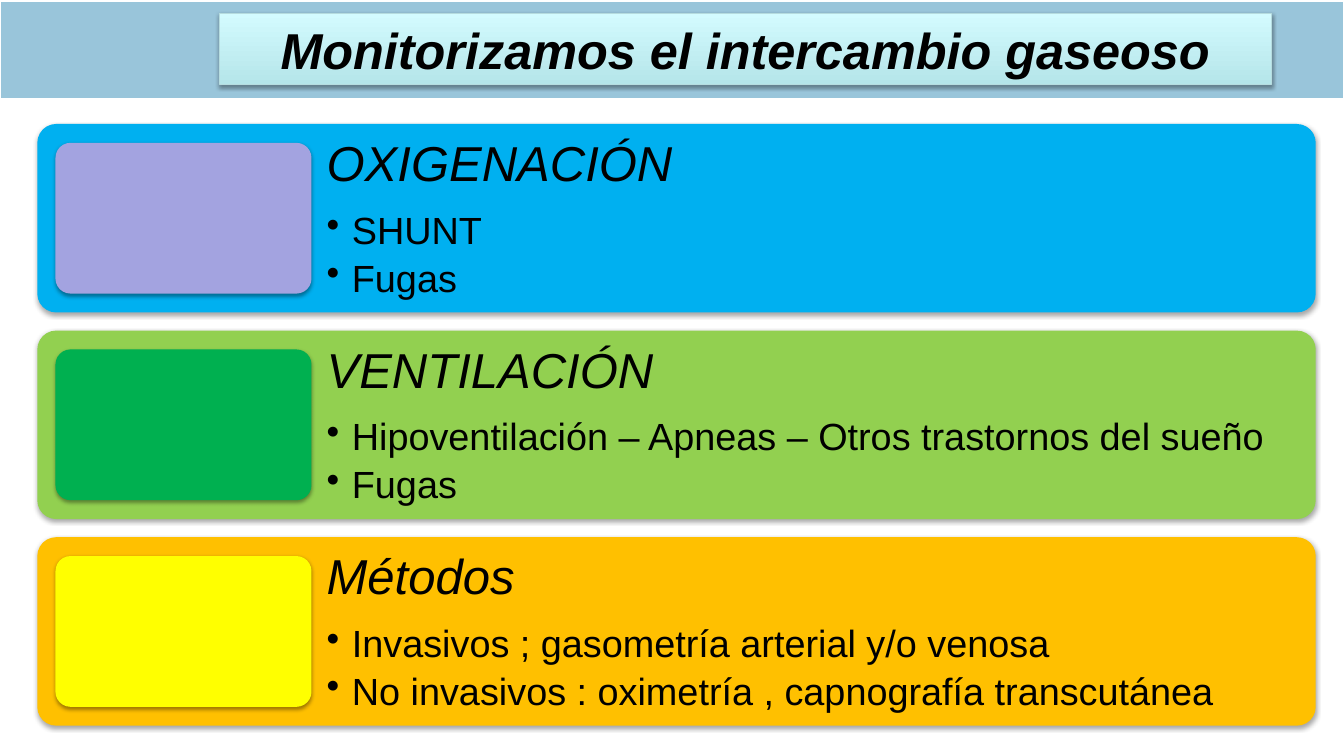
from dataclasses import dataclass

from lxml import etree
from pptx import Presentation
from pptx.dml.color import RGBColor
from pptx.enum.shapes import MSO_SHAPE
from pptx.enum.text import MSO_ANCHOR, MSO_AUTO_SIZE, PP_ALIGN
from pptx.oxml import parse_xml
from pptx.oxml.ns import qn
from pptx.util import Inches, Pt

RECT, ROUND = MSO_SHAPE.RECTANGLE, MSO_SHAPE.ROUNDED_RECTANGLE
LEFT, CENTER = PP_ALIGN.LEFT, PP_ALIGN.CENTER
TOP, MIDDLE = MSO_ANCHOR.TOP, MSO_ANCHOR.MIDDLE
FIXED = MSO_AUTO_SIZE.NONE

WIDE, HIGH = Inches(13.33), Inches(7.5)
FONT = "Arial"
DRAW = "http://schemas.openxmlformats.org/drawingml/2006/main"
HEX = {
    "ink": "000000", "white": "FFFFFF", "band": "99C5DA",
    "pale": "D3FBFF", "aqua": "B5E5E9", "rim": "B6DCDF",
    "blue": "00B0F0", "lilac": "A3A3E0",
    "lime": "92D050", "green": "00B050",
    "amber": "FFC000", "yellow": "FFFF00",
}


@dataclass(frozen=True)
class Box:
    """A frame in percent of the slide's width and height."""
    x: float
    y: float
    w: float
    h: float

    def frame(self) -> tuple[int, int, int, int]:
        return (int(WIDE * self.x / 100), int(HIGH * self.y / 100),
                int(WIDE * self.w / 100), int(HIGH * self.h / 100))


@dataclass(frozen=True)
class Card:
    head: str
    items: tuple[str, ...]
    fill: str
    tile: str


CARDS = (
    Card("OXIGENACIÓN", ("SHUNT", "Fugas"), "blue", "lilac"),
    Card("VENTILACIÓN",
         ("Hipoventilación – Apneas – Otros trastornos del sueño", "Fugas"),
         "lime", "green"),
    Card("Métodos",
         ("Invasivos ; gasometría arterial y/o venosa",
          "No invasivos : oximetría , capnografía transcutánea"),
         "amber", "yellow"),
)
BAND = Box(0, 0.13, 100, 13.07)
TITLE = Box(16.35, 1.73, 78.24, 9.47)
FIRST = Box(2.78, 16.4, 95.12, 24.93)
PITCH = 27.33
TILE_X, TILE_W = 4.13, 19.05


def color(name: str) -> RGBColor:
    return RGBColor.from_string(HEX[name])


def shade(shape, alpha: int, dist: float) -> None:
    """Cast a soft shadow straight down."""
    shape._element.spPr.append(parse_xml(
        f'<a:effectLst xmlns:a="{DRAW}"><a:outerShdw blurRad="{Pt(3.1)}" '
        f'dist="{Pt(dist)}" dir="5400000" rotWithShape="0">'
        f'<a:srgbClr val="{HEX["ink"]}"><a:alpha val="{alpha * 1000}"/>'
        '</a:srgbClr></a:outerShdw></a:effectLst>'))


def panel(slide, box: Box, fill: str, kind=ROUND):
    shape = slide.shapes.add_shape(kind, *box.frame())
    shape.fill.solid()
    shape.fill.fore_color.rgb = color(fill)
    shape.line.fill.background()
    if kind == ROUND:
        shape.adjustments[0] = 0.1
    return shape


def setup(frame, inset: float, anchor=TOP) -> None:
    frame.word_wrap = True
    frame.auto_size = FIXED
    frame.vertical_anchor = anchor
    frame.margin_left = frame.margin_right = Inches(inset)
    frame.margin_top = frame.margin_bottom = Inches(min(inset, 0.15))


def write(para, text: str, *, size: float, bold: bool = False,
          italic: bool = False, align=LEFT, line: float = 1,
          after: float = 0, bullet: bool = False) -> None:
    para.alignment = align
    para.line_spacing = line
    para.space_before, para.space_after = Pt(0), Pt(after)
    if bullet:
        para.level = 1
        props = para._p.get_or_add_pPr()
        props.set("marL", str(Inches(0.25)))
        props.set("indent", str(-Inches(0.25)))
        etree.SubElement(props, qn("a:buChar")).set("char", "•")
    run = para.add_run()
    run.text = text
    font = run.font
    font.name, font.size = FONT, Pt(size)
    font.bold, font.italic = bold, italic
    font.color.rgb = color("ink")


def draw_title(slide) -> None:
    title = slide.shapes.title
    title.left, title.top, title.width, title.height = TITLE.frame()
    props = title._element.spPr
    etree.SubElement(props, qn("a:prstGeom")).set("prst", "roundRect")
    title.fill.gradient()
    title.fill.gradient_angle = 90
    for stop, name in zip(title.fill.gradient_stops, ("aqua", "pale")):
        stop.color.rgb = color(name)
    title.line.color.rgb = color("rim")
    title.line.width = Pt(0.75)
    shade(title, 35, 1.8)
    setup(title.text_frame, 0.1, MIDDLE)
    write(title.text_frame.paragraphs[0],
          "Monitorizamos el intercambio gaseoso",
          size=36, bold=True, italic=True, align=CENTER)
    slide.shapes._spTree.append(title._element)


def draw_card(slide, card: Card, row: int) -> None:
    top, high = FIRST.y + row * PITCH, FIRST.h
    shade(panel(slide, Box(FIRST.x, top, FIRST.w, high), card.fill), 35, 1.8)
    left = TILE_X + TILE_W
    area = Box(left, top, FIRST.x + FIRST.w - left, high)
    frame = slide.shapes.add_textbox(*area.frame()).text_frame
    setup(frame, 0.15)
    write(frame.paragraphs[0], card.head, size=35, italic=True,
          line=0.9, after=14)
    for item in card.items:
        write(frame.add_paragraph(), item, size=27, line=0.9, after=5,
              bullet=True)
    tile = Box(TILE_X, top + 0.1 * high, TILE_W, 0.8 * high)
    shade(panel(slide, tile, card.tile), 38, 1.6)


def main() -> None:
    deck = Presentation()
    deck.slide_width, deck.slide_height = WIDE, HIGH
    slide = deck.slides.add_slide(deck.slide_layouts[5])
    band = panel(slide, BAND, "band", RECT)
    band.shadow.inherit = False
    band.line.color.rgb = color("white")
    band.line.width = Pt(2)
    for row, card in enumerate(CARDS):
        draw_card(slide, card, row)
    draw_title(slide)
    deck.save("out.pptx")


if __name__ == "__main__":
    main()
